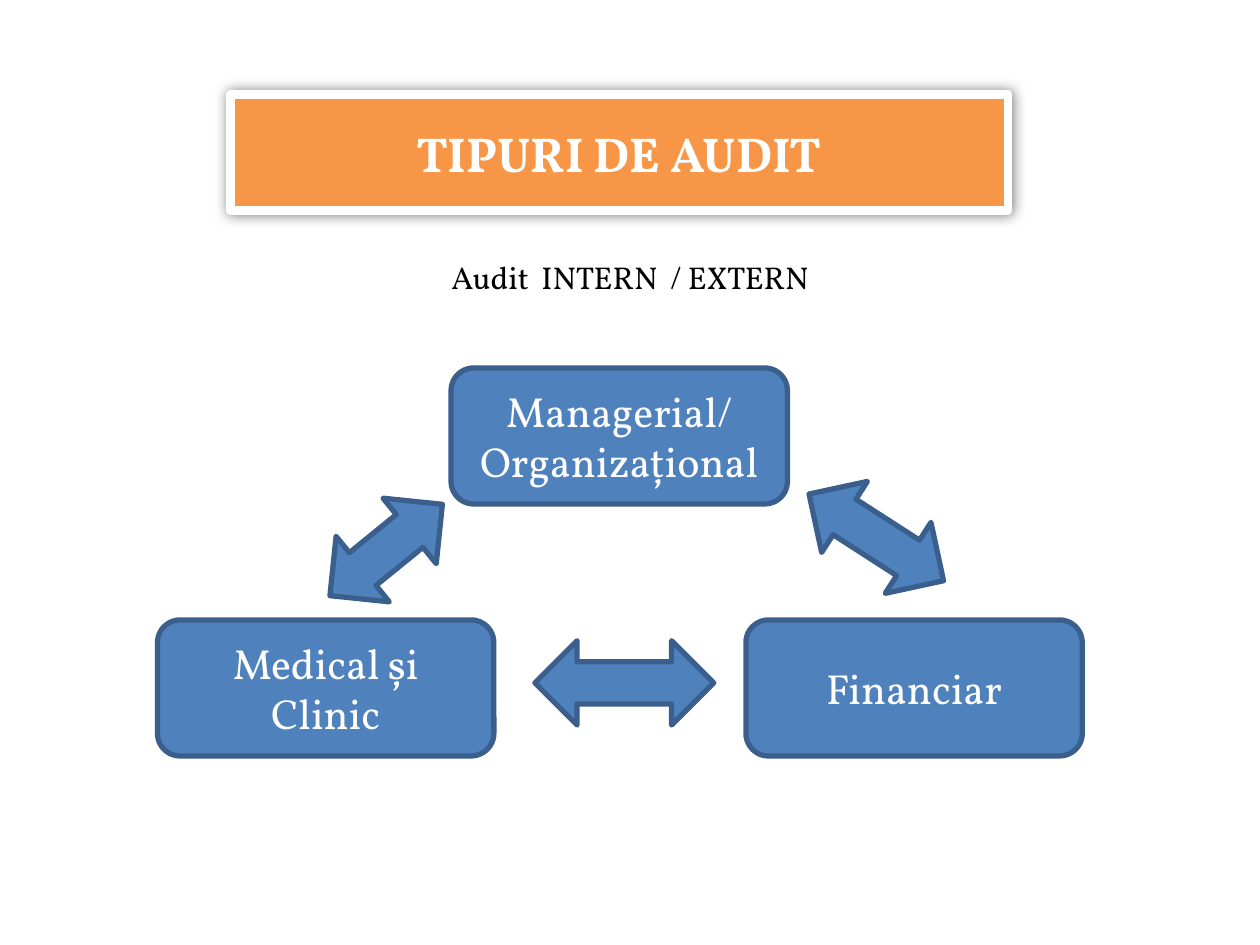
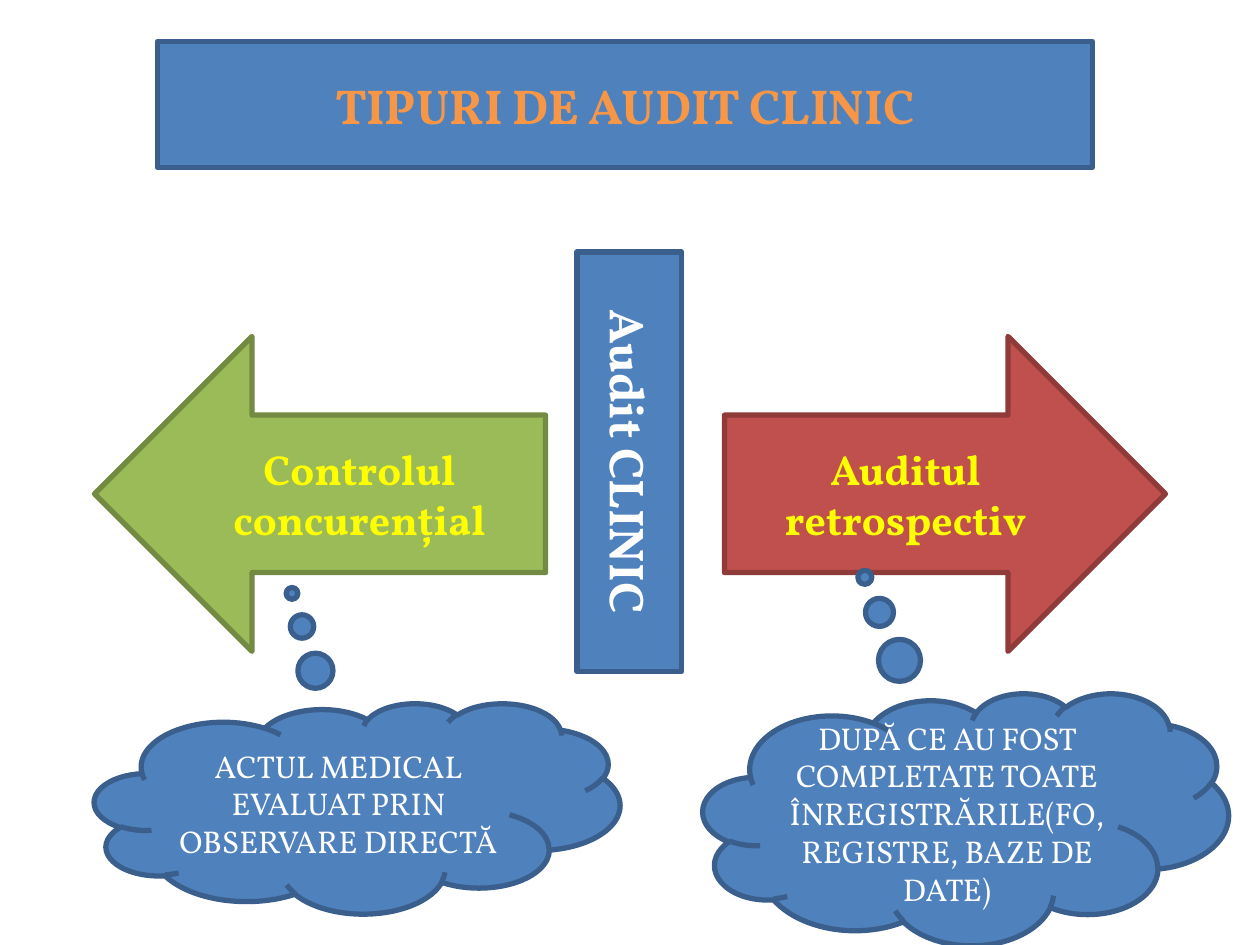
"""Build two slides on the types of audit and of clinical audit."""
from dataclasses import dataclass

from lxml import etree
from pptx import Presentation
from pptx.dml.color import RGBColor
from pptx.enum import shapes, text
from pptx.oxml import ns
from pptx.util import Inches, Pt

KIND = shapes.MSO_SHAPE


@dataclass(frozen=True)
class Paint:
    """Fill, outline colour and outline width of a shape."""
    fill: str
    line: str
    width: float = 3


@dataclass(frozen=True)
class Theme:
    """Colours, font and type sizes shared by the slides."""
    font: str = "Vollkorn"
    title: int = 28
    label: int = 24
    body: int = 18
    white: str = "FFFFFF"
    black: str = "000000"
    orange: str = "F79646"
    yellow: str = "FFFF00"
    blue: Paint = Paint("4F81BD", "3A5F8C")
    green: Paint = Paint("9BBB59", "738A42")
    red: Paint = Paint("C0504D", "8E3B39")
    banner: Paint = Paint("F79646", "FFFFFF", 5)


T = Theme()


@dataclass(frozen=True)
class Block:
    """A preset shape with its box in inches, its look and its words."""
    kind: KIND
    box: tuple[float, float, float, float]
    words: str = ""
    paint: Paint = T.blue
    size: int = T.label
    color: str = T.white
    bold: bool = False
    rotation: float = 0
    tail: tuple[float, ...] = ()


def audit_type(x: float, y: float, words: str) -> Block:
    """Describe one rounded box of the audit triangle."""
    return Block(KIND.ROUNDED_RECTANGLE, (x, y, 2.67, 1.08), words)


def link(x: float, y: float, length: float, rotation: float) -> Block:
    """Describe a two-headed arrow between two audit types."""
    return Block(KIND.UP_DOWN_ARROW, (x, y, 0.67, length), rotation=rotation)


def direction(kind: KIND, x: float, width: float, words: str, paint: Paint) -> Block:
    """Describe a large arrow that names a kind of clinical audit."""
    return Block(kind, (x, 2.67, width, 2.5), words, paint, color=T.yellow, bold=True)


def thought(box: tuple[float, float, float, float], words: str,
            tail: tuple[float, float]) -> Block:
    """Describe a cloud that explains a kind of clinical audit."""
    return Block(KIND.CLOUD_CALLOUT, box, words, size=T.body, tail=tail)


AUDIT_TYPES = [
    audit_type(1.25, 4.92, "Medical și Clinic"),
    audit_type(5.92, 4.92, "Financiar"),
    audit_type(3.58, 2.92, "Managerial/\nOrganizațional"),
]
LINKS = [
    link(2.73, 3.79, 1.15, 50.9),
    link(4.62, 4.71, 1.42, 90),
    link(6.62, 3.63, 1.27, 302.8),
]
CLINICAL_AUDIT = [
    Block(KIND.RECTANGLE, (3.33, 3.25, 3.33, 0.83), "Audit CLINIC",
          size=T.title, bold=True, rotation=90),
    direction(KIND.LEFT_ARROW, 0.75, 3.58, "Controlul concurențial", T.green),
    direction(KIND.RIGHT_ARROW, 5.75, 3.5, "Auditul retrospectiv", T.red),
    thought((0.75, 5.58, 4.17, 1.67),
            "ACTUL MEDICAL EVALUAT PRIN OBSERVARE DIRECTĂ", (-0.124, -1.021)),
    thought((5.58, 5.5, 4.17, 2),
            "DUPĂ CE AU FOST COMPLETATE TOATE ÎNREGISTRĂRILE(FO, REGISTRE, BAZE DE DATE)",
            (-0.192, -0.959)),
]


def write(sp, words: str, *, size: int, color: str, bold: bool = False,
          anchor=text.MSO_ANCHOR.MIDDLE) -> None:
    """Put centred text into a shape, one paragraph a line."""
    tf = sp.text_frame
    tf.word_wrap = True
    tf.auto_size = text.MSO_AUTO_SIZE.NONE
    tf.vertical_anchor = anchor
    for i, line in enumerate(words.split("\n")):
        p = tf.add_paragraph() if i else tf.paragraphs[0]
        p.alignment = text.PP_ALIGN.CENTER
        r = p.add_run()
        r.text = line
        r.font.name = T.font
        r.font.size = Pt(size)
        r.font.bold = bold
        r.font.color.rgb = RGBColor.from_string(color)


def coat(sp, paint: Paint) -> None:
    """Give a shape its fill and outline."""
    sp.fill.solid()
    sp.fill.fore_color.rgb = RGBColor.from_string(paint.fill)
    sp.line.color.rgb = RGBColor.from_string(paint.line)
    sp.line.width = Pt(paint.width)


def add_glow_shadow(sp) -> None:
    """Add a soft, half-transparent shadow around a shape."""
    effects = etree.SubElement(sp._element.spPr, ns.qn("a:effectLst"))
    shadow = etree.SubElement(effects, ns.qn("a:outerShdw"), blurRad=str(Pt(7.5)),
                              dist="0", dir="0", algn="ctr", rotWithShape="0")
    color = etree.SubElement(shadow, ns.qn("a:srgbClr"), val=T.black)
    etree.SubElement(color, ns.qn("a:alpha"), val="50000")


def draw(s, block: Block) -> None:
    """Draw one block on a slide."""
    sp = s.shapes.add_shape(block.kind, *map(Inches, block.box))
    sp.shadow.inherit = False
    sp.rotation = block.rotation
    for i, value in enumerate(block.tail):
        sp.adjustments[i] = value
    coat(sp, block.paint)
    if block.words:
        write(sp, block.words, size=block.size, color=block.color, bold=block.bold)


def titled_slide(prs, words: str, box: tuple[float, float, float, float],
                 paint: Paint, color: str):
    """Add a slide whose title is a filled band."""
    s = prs.slides.add_slide(prs.slide_layouts[5])
    sp = s.shapes.title
    sp.left, sp.top, sp.width, sp.height = map(Inches, box)
    coat(sp, paint)
    write(sp, words, size=T.title, color=color, bold=True)
    return s


def build_audit_types(prs) -> None:
    """Build the triangle of audit types."""
    s = titled_slide(prs, "TIPURI DE AUDIT", (1.83, 0.75, 6.17, 0.92), T.banner, T.white)
    add_glow_shadow(s.shapes.title)
    for block in AUDIT_TYPES:
        draw(s, block)
    sp = s.shapes.add_textbox(*map(Inches, (2.75, 2, 4.5, 0.4)))
    write(sp, "Audit  INTERN  / EXTERN", size=T.body, color=T.black,
          anchor=text.MSO_ANCHOR.TOP)
    for block in LINKS:
        draw(s, block)


def build_clinical_audit(prs) -> None:
    """Build the two directions of clinical audit."""
    s = titled_slide(prs, "TIPURI DE AUDIT CLINIC", (1.25, 0.33, 7.42, 1), T.blue, T.orange)
    for block in CLINICAL_AUDIT:
        draw(s, block)


def main() -> None:
    """Build and save the presentation."""
    prs = Presentation()
    prs.slide_width, prs.slide_height = Inches(10), Inches(7.5)
    build_audit_types(prs)
    build_clinical_audit(prs)
    prs.save("out.pptx")


if __name__ == "__main__":
    main()
